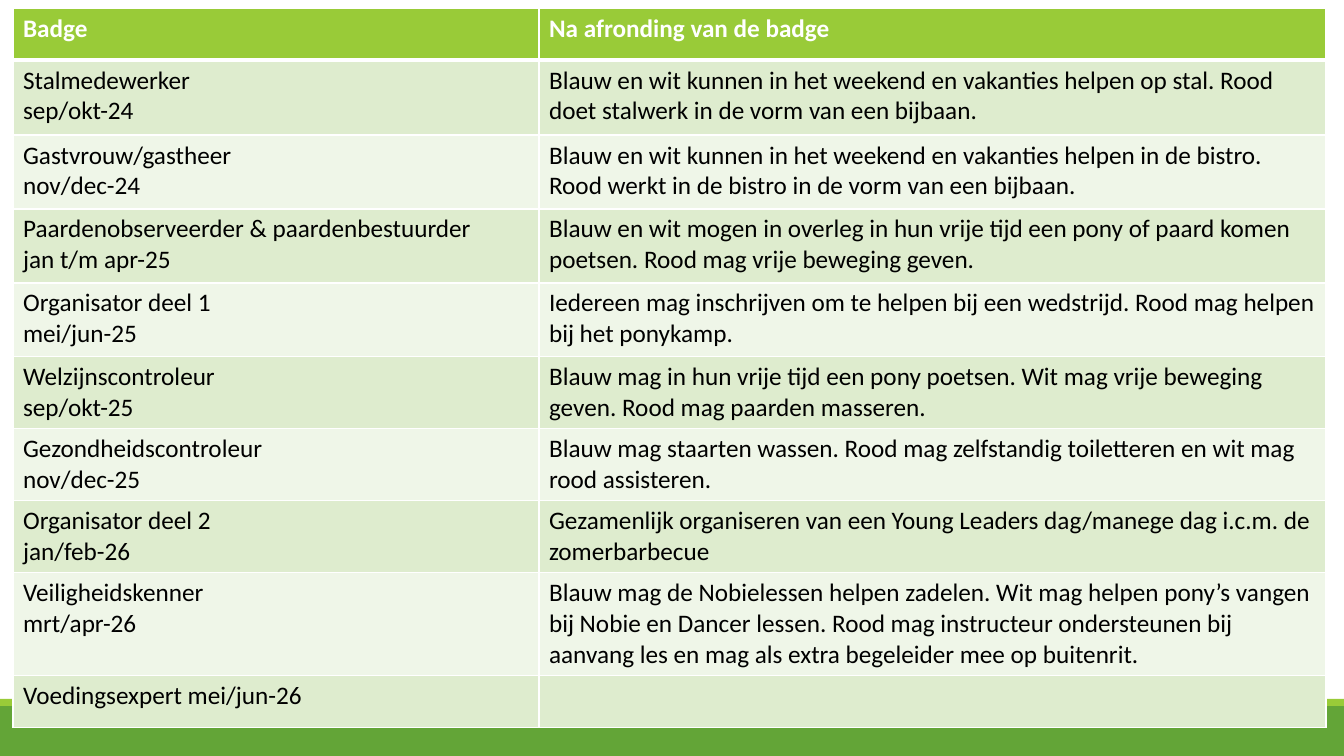
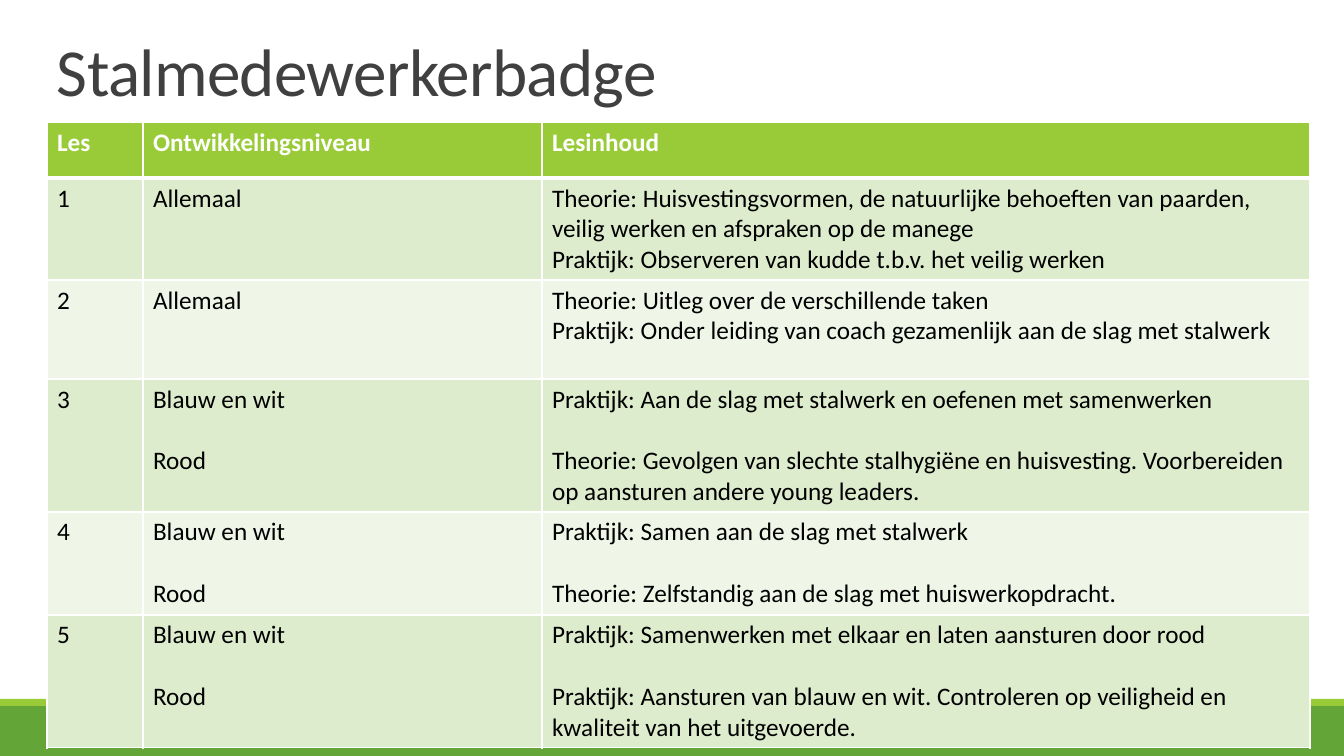
from lxml import etree
from pptx import Presentation
from pptx.dml.color import RGBColor
from pptx.enum.shapes import MSO_SHAPE
from pptx.enum.text import MSO_ANCHOR
from pptx.oxml.ns import qn
from pptx.util import Emu, Pt

RECTANGLE = MSO_SHAPE.RECTANGLE
BOTTOM = MSO_ANCHOR.BOTTOM

SLIDE_WIDTH, SLIDE_HEIGHT = 1344, 756
SCALE = 12192000 / SLIDE_WIDTH
BLANK_LAYOUT = 6

FONT = "Calibri"
WHITE, BLACK, TITLE_GREY = "FFFFFF", "000000", "404040"
GREEN, LIME = "63A537", "99CB38"
ROW_FILLS = ["DEECCE", "EFF6E8"]
BODY_SIZE = 18
BLOCK_GAP = 22

BADGE_ROWS = [
    ("Badge", "Na afronding van de badge"),
    ("Stalmedewerker\nsep/okt-24",
     "Blauw en wit kunnen in het weekend en vakanties helpen op stal. "
     "Rood doet stalwerk in de vorm van een bijbaan."),
    ("Gastvrouw/gastheer\nnov/dec-24",
     "Blauw en wit kunnen in het weekend en vakanties helpen in de bistro. "
     "Rood werkt in de bistro in de vorm van een bijbaan."),
    ("Paardenobserveerder & paardenbestuurder\njan t/m apr-25",
     "Blauw en wit mogen in overleg in hun vrije tijd een pony of paard komen poetsen. "
     "Rood mag vrije beweging geven."),
    ("Organisator deel 1\nmei/jun-25",
     "Iedereen mag inschrijven om te helpen bij een wedstrijd. "
     "Rood mag helpen bij het ponykamp."),
    ("Welzijnscontroleur\nsep/okt-25",
     "Blauw mag in hun vrije tijd een pony poetsen. Wit mag vrije beweging geven. "
     "Rood mag paarden masseren."),
    ("Gezondheidscontroleur\nnov/dec-25",
     "Blauw mag staarten wassen. Rood mag zelfstandig toiletteren en wit mag rood assisteren."),
    ("Organisator deel 2\njan/feb-26",
     "Gezamenlijk organiseren van een Young Leaders dag/manege dag i.c.m. de zomerbarbecue"),
    ("Veiligheidskenner\nmrt/apr-26",
     "Blauw mag de Nobielessen helpen zadelen. "
     "Wit mag helpen pony’s vangen bij Nobie en Dancer lessen. "
     "Rood mag instructeur ondersteunen bij aanvang les "
     "en mag als extra begeleider mee op buitenrit."),
    ("Voedingsexpert mei/jun-26", ""),
]
BADGE_COLUMNS = [526, 787]
BADGE_HEIGHTS = [52, 75, 74, 74, 74, 72, 72, 72, 102, 52]

LESSON_ROWS = [
    ("Les", "Ontwikkelingsniveau", "Lesinhoud"),
    ("1", "Allemaal",
     "Theorie: Huisvestingsvormen, de natuurlijke behoeften van paarden, "
     "veilig werken en afspraken op de manege\n"
     "Praktijk: Observeren van kudde t.b.v. het veilig werken"),
    ("2", "Allemaal",
     "Theorie: Uitleg over de verschillende taken\n"
     "Praktijk: Onder leiding van coach gezamenlijk aan de slag met stalwerk"),
    ("3", "Blauw en wit\n\nRood",
     "Praktijk: Aan de slag met stalwerk en oefenen met samenwerken\n\n"
     "Theorie: Gevolgen van slechte stalhygiëne en huisvesting. "
     "Voorbereiden op aansturen andere young leaders."),
    ("4", "Blauw en wit\n\nRood",
     "Praktijk: Samen aan de slag met stalwerk\n\n"
     "Theorie: Zelfstandig aan de slag met huiswerkopdracht."),
    ("5", "Blauw en wit\n\nRood",
     "Praktijk: Samenwerken met elkaar en laten aansturen door rood\n\n"
     "Praktijk: Aansturen van blauw en wit. "
     "Controleren op veiligheid en kwaliteit van het uitgevoerde."),
]
LESSON_COLUMNS = [96, 399, 768]
LESSON_HEIGHTS = [56, 102, 99, 133, 103, 133]


def px(length):
    return Emu(round(length * SCALE))


def color(hex_code):
    return RGBColor.from_string(hex_code)


def write_text(frame, text, size=BODY_SIZE, ink=BLACK, bold=False,
               line_spacing=None, tracking=None):
    paragraph = frame.paragraphs[0]
    for block_index, block in enumerate(text.split("\n\n")):
        for line_index, line in enumerate(block.split("\n")):
            if block_index or line_index:
                paragraph = frame.add_paragraph()
            if block_index and not line_index:
                paragraph.space_before = Pt(BLOCK_GAP)
            if line_spacing:
                paragraph.line_spacing = line_spacing
            paragraph.font.size = Pt(size)
            if not line:
                continue
            run = paragraph.add_run()
            run.text = line
            run.font.name = FONT
            run.font.size = Pt(size)
            run.font.bold = bold
            run.font.color.rgb = color(ink)
            if tracking:
                run.font._element.set("spc", str(tracking))


def add_band(slide, top, height, fill):
    band = slide.shapes.add_shape(RECTANGLE, 0, px(top), px(SLIDE_WIDTH), px(height))
    band.shadow.inherit = False
    band.fill.solid()
    band.fill.fore_color.rgb = color(fill)
    band.line.fill.background()


def add_slide(deck):
    slide = deck.slides.add_slide(deck.slide_layouts[BLANK_LAYOUT])
    add_band(slide, 706, 50, GREEN)
    add_band(slide, 699, 7, LIME)
    return slide


def add_title(slide, text):
    title = slide.shapes.add_textbox(px(47), 0, px(1159), px(115))
    title.text_frame.word_wrap = True
    title.text_frame.vertical_anchor = BOTTOM
    write_text(title.text_frame, text, size=48, ink=TITLE_GREY,
               line_spacing=0.85, tracking=-50)


def set_borders(cell, top, bottom):
    properties = cell._tc.get_or_add_tcPr()
    for side, width in (("L", 1), ("R", 1), ("T", top), ("B", bottom)):
        border = etree.SubElement(properties, qn(f"a:ln{side}"), w=str(Pt(width)))
        fill = etree.SubElement(border, qn("a:solidFill"))
        etree.SubElement(fill, qn("a:srgbClr"), val=WHITE)


def add_grid(slide, left, top, widths, heights, rows):
    grid = slide.shapes.add_table(len(rows), len(widths), px(left), px(top),
                                  px(sum(widths)), px(sum(heights))).table
    for column, width in zip(grid.columns, widths):
        column.width = px(width)
    for row_index, (row, height, texts) in enumerate(zip(grid.rows, heights, rows)):
        row.height = px(height)
        is_header = row_index == 0
        fill = LIME if is_header else ROW_FILLS[(row_index - 1) % 2]
        for cell, text in zip(row.cells, texts):
            set_borders(cell, top=3 if row_index == 1 else 1, bottom=3 if is_header else 1)
            cell.fill.solid()
            cell.fill.fore_color.rgb = color(fill)
            write_text(cell.text_frame, text, bold=is_header,
                       ink=WHITE if is_header else BLACK)


def main():
    deck = Presentation()
    deck.slide_width, deck.slide_height = px(SLIDE_WIDTH), px(SLIDE_HEIGHT)

    overview = add_slide(deck)
    add_grid(overview, 13, 8, BADGE_COLUMNS, BADGE_HEIGHTS, BADGE_ROWS)

    lessons = add_slide(deck)
    add_title(lessons, "Stalmedewerkerbadge")
    add_grid(lessons, 47, 122, LESSON_COLUMNS, LESSON_HEIGHTS, LESSON_ROWS)

    deck.save("out.pptx")


if __name__ == "__main__":
    main()
